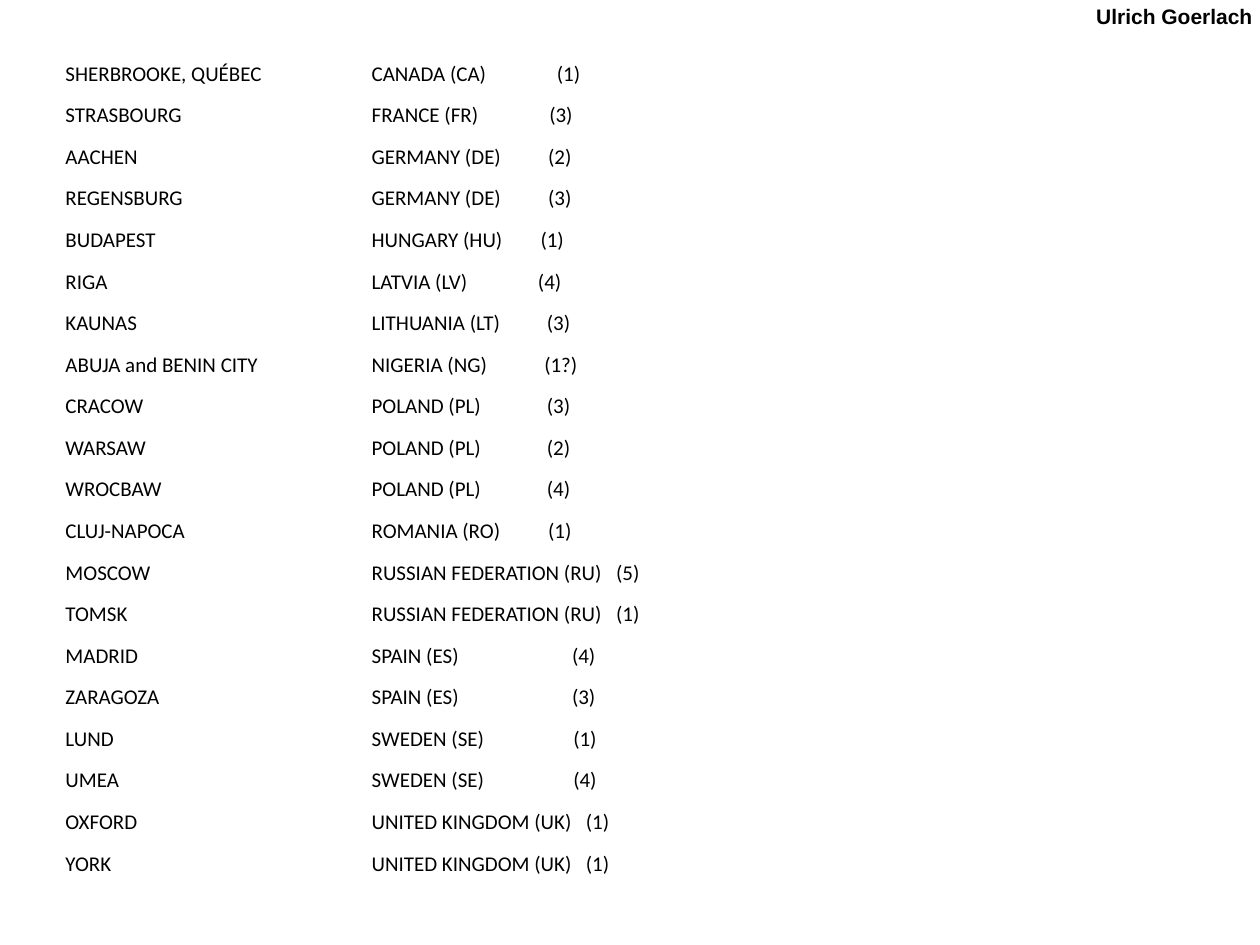
from lxml import etree
from pptx import Presentation
from pptx.dml.color import RGBColor
from pptx.enum.text import MSO_ANCHOR, PP_ALIGN
from pptx.oxml.ns import qn
from pptx.util import Inches, Pt

BLACK = RGBColor(0, 0, 0)

# Tab stop of the number, in inches from the start of the country
COUNTRIES = {
    "CANADA (CA)": 1.47,
    "FRANCE (FR)": 1.41,
    "GERMANY (DE)": 1.4,
    "HUNGARY (HU)": 1.34,
    "LATVIA (LV)": 1.32,
    "LITHUANIA (LT)": 1.39,
    "NIGERIA (NG)": 1.37,
    "POLAND (PL)": 1.39,
    "ROMANIA (RO)": 1.4,
    "RUSSIAN FEDERATION (RU)": 1.94,
    "SPAIN (ES)": 1.59,
    "SWEDEN (SE)": 1.6,
    "UNITED KINGDOM (UK)": 1.7,
}
CITIES = [
    ("SHERBROOKE, QUÉBEC", "CANADA (CA)", "(1)"),
    ("STRASBOURG", "FRANCE (FR)", "(3)"),
    ("AACHEN", "GERMANY (DE)", "(2)"),
    ("REGENSBURG", "GERMANY (DE)", "(3)"),
    ("BUDAPEST", "HUNGARY (HU)", "(1)"),
    ("RIGA", "LATVIA (LV)", "(4)"),
    ("KAUNAS", "LITHUANIA (LT)", "(3)"),
    ("ABUJA and BENIN CITY", "NIGERIA (NG)", "(1?)"),
    ("CRACOW", "POLAND (PL)", "(3)"),
    ("WARSAW", "POLAND (PL)", "(2)"),
    ("WROCBAW", "POLAND (PL)", "(4)"),
    ("CLUJ-NAPOCA", "ROMANIA (RO)", "(1)"),
    ("MOSCOW", "RUSSIAN FEDERATION (RU)", "(5)"),
    ("TOMSK", "RUSSIAN FEDERATION (RU)", "(1)"),
    ("MADRID", "SPAIN (ES)", "(4)"),
    ("ZARAGOZA", "SPAIN (ES)", "(3)"),
    ("LUND", "SWEDEN (SE)", "(1)"),
    ("UMEA", "SWEDEN (SE)", "(4)"),
    ("OXFORD", "UNITED KINGDOM (UK)", "(1)"),
    ("YORK", "UNITED KINGDOM (UK)", "(1)"),
]


def style_text(para, font_name, bold=False):
    for span in para.runs:
        span.font.name = font_name
        span.font.size = Pt(12)
        span.font.bold = bold
        span.font.color.rgb = BLACK


def add_tab_stop(para, position):
    tabs = etree.SubElement(para._p.get_or_add_pPr(), qn("a:tabLst"))
    etree.SubElement(tabs, qn("a:tab"), pos=str(Inches(position)), algn="l")


deck = Presentation()
deck.slide_width, deck.slide_height = Inches(10), Inches(7.5)
page = deck.slides.add_slide(deck.slide_layouts[6])

# Author name at the top right
box = page.shapes.add_textbox(Inches(8.6), Inches(-0.02), Inches(1.44), Inches(0.3))
box.text_frame.word_wrap = False
box.text_frame.text = "Ulrich Goerlach"
author = box.text_frame.paragraphs[0]
author.alignment = PP_ALIGN.RIGHT
style_text(author, "Arial", bold=True)

# Table of cities and countries
row_height = Inches(0.33)
table = page.shapes.add_table(len(CITIES), 2, Inches(0.51), Inches(0.36),
                              Inches(5.27), row_height * len(CITIES)).table
table.first_row = table.horz_banding = False
table.columns[0].width, table.columns[1].width = Inches(2.43), Inches(2.84)

for row, (city, country, number) in zip(table.rows, CITIES):
    row.height = row_height
    for cell, text in zip(row.cells, (city, f"{country}\t{number}")):
        cell.fill.background()
        cell.vertical_anchor = MSO_ANCHOR.BOTTOM
        cell.margin_left = cell.margin_right = cell.margin_top = Inches(0.01)
        cell.margin_bottom = 0
        para = cell.text_frame.paragraphs[0]
        para.text = text
        if "\t" in text:
            add_tab_stop(para, COUNTRIES[country])
        style_text(para, "Calibri")

deck.save("out.pptx")
